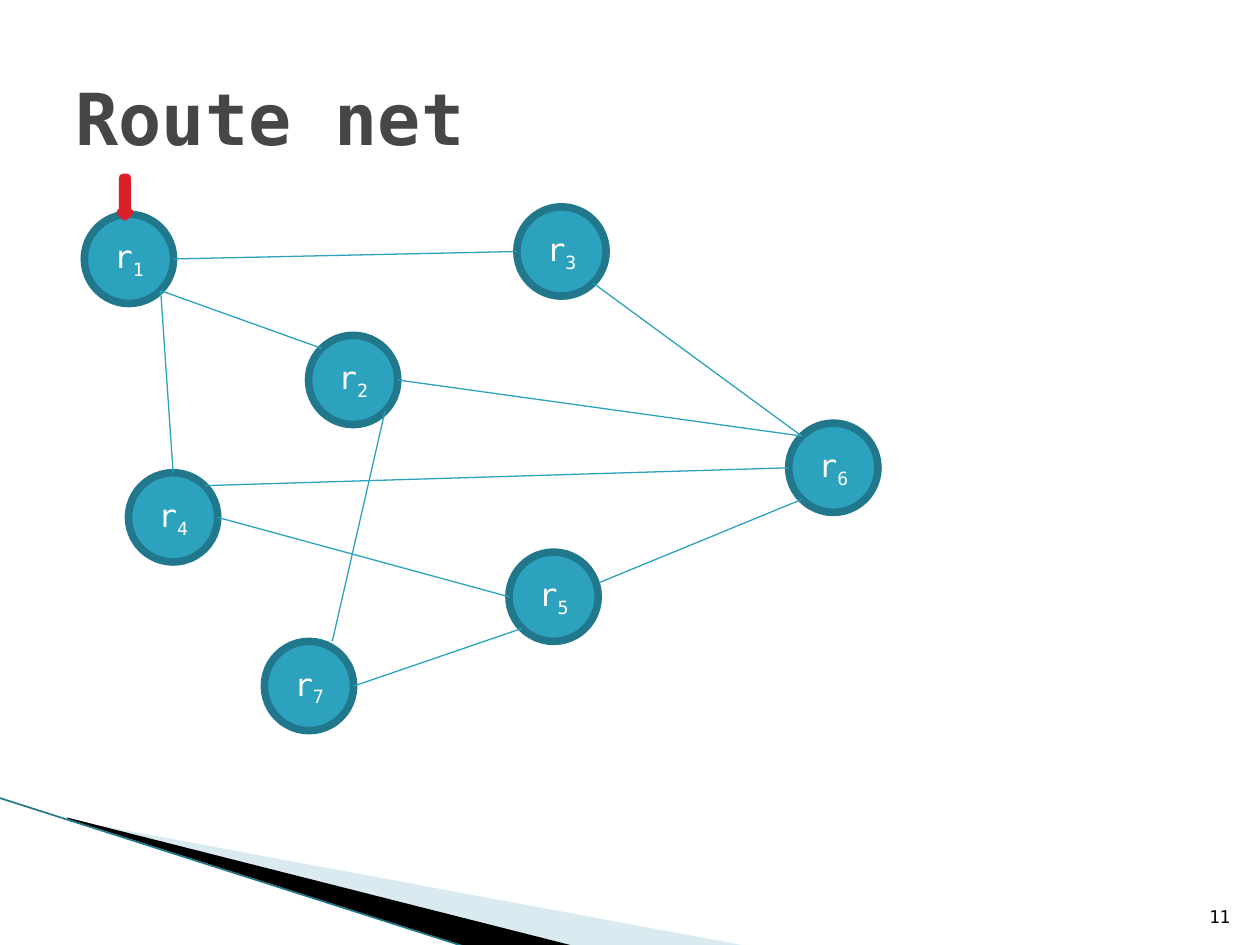
from lxml import etree
from pptx import Presentation
from pptx.dml.color import RGBColor
from pptx.enum.shapes import MSO_CONNECTOR, MSO_SHAPE
from pptx.enum.text import MSO_ANCHOR, PP_ALIGN
from pptx.oxml.ns import qn
from pptx.util import Cm, Pt

ELLIPSE, DOWN_ARROW = MSO_SHAPE.OVAL, MSO_SHAPE.DOWN_ARROW
STRAIGHT = MSO_CONNECTOR.STRAIGHT
MIDDLE, BOTTOM = MSO_ANCHOR.MIDDLE, MSO_ANCHOR.BOTTOM
LEFT, CENTER, RIGHT = PP_ALIGN.LEFT, PP_ALIGN.CENTER, PP_ALIGN.RIGHT

FONT = "DejaVu Sans Mono"
BLACK = RGBColor(0x00, 0x00, 0x00)
WHITE = RGBColor(0xFF, 0xFF, 0xFF)
GREY = RGBColor(0x46, 0x46, 0x46)
TEAL = RGBColor(0x2D, 0xA2, 0xBF)
DARK_TEAL = RGBColor(0x21, 0x78, 0x8D)
PALE_BLUE = RGBColor(0xA0, 0xCB, 0xDC)
RED = RGBColor(0xDA, 0x1F, 0x28)

RADIUS = 0.9
DIAGONAL = 0.71
# Left and top of each router, in centimetres
ROUTERS = {
    1: (1.7, 4.32),
    2: (6.22, 6.76),
    4: (2.59, 9.53),
    3: (10.42, 4.17),
    5: (10.26, 11.13),
    7: (5.33, 12.93),
    6: (15.9, 8.53),
}
# Where a route meets a router, in radii from its centre
SITES = {
    "top": (0, -1),
    "left": (-1, 0),
    "right": (1, 0),
    "top left": (-DIAGONAL, -DIAGONAL),
    "top right": (DIAGONAL, -DIAGONAL),
    "bottom left": (-DIAGONAL, DIAGONAL),
    "bottom right": (DIAGONAL, DIAGONAL),
    "above right": (0.52, -1),
    "right upper": (1.03, -0.32),
}
ROUTES = [
    (1, "right", 3, "left"),
    (2, "bottom right", 7, "above right"),
    (7, "right", 5, "bottom left"),
    (1, "bottom right", 4, "top"),
    (1, "bottom right", 2, "top left"),
    (2, "right", 6, "top left"),
    (3, "bottom right", 6, "top left"),
    (6, "bottom left", 5, "right upper"),
    (4, "right", 5, "left"),
    (4, "top right", 6, "left"),
]


def style_paragraph(paragraph, size, color, alignment, bold=False):
    paragraph.alignment = alignment
    font = paragraph.font
    font.name = FONT
    font.size = Pt(size)
    font.bold = bold
    font.color.rgb = color


def add_wedge(slide, points, color, opacity=100):
    points = [(Cm(x), Cm(y)) for x, y in points]
    builder = slide.shapes.build_freeform(*points[0])
    builder.add_line_segments(points[1:], close=True)
    wedge = builder.convert_to_shape()
    wedge.shadow.inherit = False
    wedge.fill.solid()
    wedge.fill.fore_color.rgb = color
    wedge.line.fill.background()
    if opacity < 100:
        color_element = wedge.fill._xPr.find(".//" + qn("a:srgbClr"))
        alpha = etree.SubElement(color_element, qn("a:alpha"))
        alpha.set("val", str(opacity * 1000))


def add_line(slide, start, end, color, width):
    line = slide.shapes.add_connector(
        STRAIGHT, *(Cm(value) for value in (*start, *end)))
    line.line.color.rgb = color
    line.line.width = Pt(width)
    etree.SubElement(line._element.spPr, qn("a:effectLst"))


def add_outlined_shape(slide, kind, left, top, width, height, fill, outline):
    shape = slide.shapes.add_shape(
        kind, Cm(left), Cm(top), Cm(width), Cm(height))
    shape.shadow.inherit = False
    shape.fill.solid()
    shape.fill.fore_color.rgb = fill
    shape.line.color.rgb = outline
    shape.line.width = Pt(4.33)
    return shape


def add_router(slide, number, left, top):
    router = add_outlined_shape(
        slide, ELLIPSE, left, top, 2 * RADIUS, 2 * RADIUS, TEAL, DARK_TEAL)
    frame = router.text_frame
    frame.word_wrap = False
    frame.vertical_anchor = MIDDLE
    paragraph = frame.paragraphs[0]
    style_paragraph(paragraph, 18, WHITE, CENTER)
    paragraph.add_run().text = "r"
    subscript = paragraph.add_run()
    subscript.text = str(number)
    subscript.font._element.set("baseline", "-25000")


def site_position(number, site):
    return [corner + RADIUS * (1 + offset)
            for corner, offset in zip(ROUTERS[number], SITES[site])]


def add_background(slide):
    add_wedge(slide, [(1.4, 16.53), (15.11, 19.08), (11.58, 19.08),
                      (1.4, 16.51)], PALE_BLUE, opacity=40)
    add_wedge(slide, [(1.35, 16.48), (11.61, 19.08), (9.45, 19.1),
                      (1.37, 16.51)], BLACK)
    add_line(slide, (-0.03, 16.08), (9.42, 19.1), DARK_TEAL, 0.95)


def add_title(slide, text):
    title = slide.shapes.title
    title.left, title.top = Cm(1.27), Cm(0.76)
    title.width, title.height = Cm(22.86), Cm(3.18)
    title.text_frame.text = text
    title.text_frame.vertical_anchor = MIDDLE
    style_paragraph(title.text_frame.paragraphs[0], 41, GREY, LEFT, bold=True)


def add_page_number(slide, text):
    box = slide.shapes.add_textbox(Cm(24.03), Cm(17.8), Cm(1.02), Cm(1.02))
    frame = box.text_frame
    frame.text = text
    frame.word_wrap = True
    frame.vertical_anchor = BOTTOM
    style_paragraph(frame.paragraphs[0], 10, BLACK, RIGHT)


def main():
    presentation = Presentation()
    presentation.slide_width, presentation.slide_height = Cm(25.4), Cm(19.05)
    slide = presentation.slides.add_slide(presentation.slide_layouts[5])
    add_background(slide)
    add_page_number(slide, "11")
    add_title(slide, "Route net")
    for number, (left, top) in ROUTERS.items():
        add_router(slide, number, left, top)
    for start, start_site, end, end_site in ROUTES:
        add_line(slide, site_position(start, start_site),
                 site_position(end, end_site), TEAL, 0.75)
    add_outlined_shape(slide, DOWN_ARROW, 2.43, 3.58, 0.18, 0.79, RED, RED)
    presentation.save("out.pptx")


if __name__ == "__main__":
    main()
